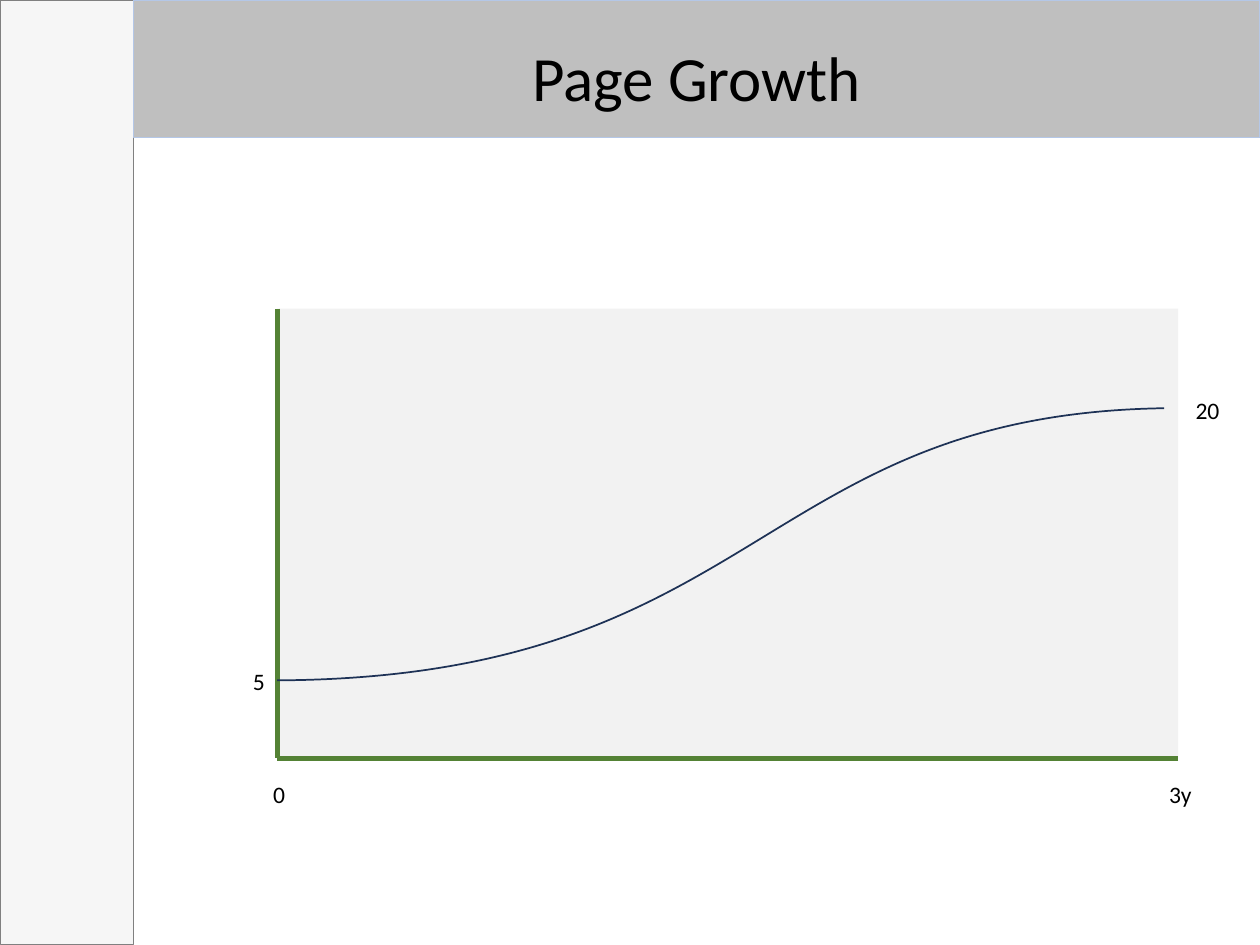
from lxml.etree import SubElement
from pptx import Presentation
from pptx.dml.color import RGBColor
from pptx.enum.shapes import MSO_CONNECTOR, MSO_SHAPE
from pptx.enum.text import MSO_ANCHOR, MSO_AUTO_SIZE, PP_ALIGN
from pptx.oxml.ns import qn
from pptx.util import Inches, Pt

COLORS = {
    "panel": "F6F6F6", "panel_edge": "808080",
    "band": "BFBFBF", "band_edge": "B4C7E7",
    "plot": "F2F2F2", "axis": "548235", "curve": "1E3256", "text": "000000",
}
FONT = "Calibri"
WIDTH, HEIGHT = 10, 7.5
PANEL_WIDTH, BAND_HEIGHT = 1.06, 1.09
LEFT, TOP, RIGHT, BOTTOM = 2.2, 2.45, 9.35, 6.02

TITLE = "Page Growth"
AXES = [((LEFT, TOP), (LEFT, BOTTOM)), ((RIGHT, BOTTOM), (LEFT, BOTTOM))]
CURVE = [(LEFT, 5.4), (6.04, 5.38), (6, 3.29), (9.24, 3.24)]
LABELS = [
    ("0", 2.07, 6.14, 0.3),
    ("3y", 9.18, 6.14, 0.38),
    ("20", 9.39, 3.09, 0.39),
    ("5", 1.91, 5.24, 0.3),
]
LABEL_HEIGHT = 0.33


def color(name):
    """Return the named palette colour."""
    return RGBColor.from_string(COLORS[name])


def paint_line(line, name, width):
    """Give a line its colour and its width in points."""
    line.color.rgb = color(name)
    line.width = Pt(width)


def paint_fill(shape, name):
    """Give a shape a solid fill."""
    shape.fill.solid()
    shape.fill.fore_color.rgb = color(name)


def add_rectangle(slide, box, fill):
    """Add a filled rectangle without outline or shadow."""
    rectangle = slide.shapes.add_shape(MSO_SHAPE.RECTANGLE, *map(Inches, box))
    rectangle.shadow.inherit = False
    paint_fill(rectangle, fill)
    rectangle.line.fill.background()
    return rectangle


def format_text(paragraph, size):
    """Format the runs of a paragraph."""
    for run in paragraph.runs:
        run.font.name = FONT
        run.font.size = Pt(size)
        run.font.color.rgb = color("text")


def add_title(slide):
    """Fill the title placeholder and turn it into the top band."""
    title = slide.shapes.title
    title.left, title.top = Inches(PANEL_WIDTH), Inches(0)
    title.width, title.height = Inches(WIDTH - PANEL_WIDTH), Inches(BAND_HEIGHT)
    paint_fill(title, "band")
    paint_line(title.line, "band_edge", 0.75)
    frame = title.text_frame
    frame.text = TITLE
    frame.auto_size = MSO_AUTO_SIZE.NONE
    frame.vertical_anchor = MSO_ANCHOR.MIDDLE
    paragraph = frame.paragraphs[0]
    paragraph.alignment = PP_ALIGN.CENTER
    paragraph.line_spacing = 1.2
    format_text(paragraph, 36)


def add_axis(slide, start, end):
    """Add one straight axis line."""
    axis = slide.shapes.add_connector(
        MSO_CONNECTOR.STRAIGHT, *map(Inches, start + end))
    paint_line(axis.line, "axis", 3)
    SubElement(axis.element.spPr, qn("a:effectLst"))


def add_curve(slide):
    """Add the growth curve as a single cubic Bezier segment."""
    start, *controls = [(Inches(x), Inches(y)) for x, y in CURVE]
    builder = slide.shapes.build_freeform(*start)
    builder.add_line_segments(controls, close=False)
    curve = builder.convert_to_shape()
    curve.shadow.inherit = False
    curve.fill.background()
    paint_line(curve.line, "curve", 1)
    outline = next(curve.element.iter(qn("a:path")))
    segments = outline.findall(qn("a:lnTo"))
    bezier = SubElement(outline, qn("a:cubicBezTo"))
    for segment in segments:
        bezier.append(segment[0])
        outline.remove(segment)


def add_label(slide, text, left, top, width):
    """Add one axis value."""
    label = slide.shapes.add_textbox(
        *map(Inches, (left, top, width, LABEL_HEIGHT)))
    frame = label.text_frame
    frame.text = text
    frame.word_wrap = False
    frame.auto_size = MSO_AUTO_SIZE.SHAPE_TO_FIT_TEXT
    format_text(frame.paragraphs[0], 13.5)


def main():
    """Build the page growth slide."""
    presentation = Presentation()
    presentation.slide_width = Inches(WIDTH)
    presentation.slide_height = Inches(HEIGHT)
    slide = presentation.slides.add_slide(presentation.slide_layouts[5])
    panel = add_rectangle(slide, (0, 0, PANEL_WIDTH, HEIGHT), "panel")
    paint_line(panel.line, "panel_edge", 0.5)
    slide.shapes.title.element.addprevious(panel.element)
    add_title(slide)
    add_rectangle(slide, (LEFT, TOP, RIGHT - LEFT, BOTTOM - TOP), "plot")
    for start, end in AXES:
        add_axis(slide, start, end)
    add_curve(slide)
    for label in LABELS:
        add_label(slide, *label)
    presentation.save("out.pptx")


if __name__ == "__main__":
    main()
